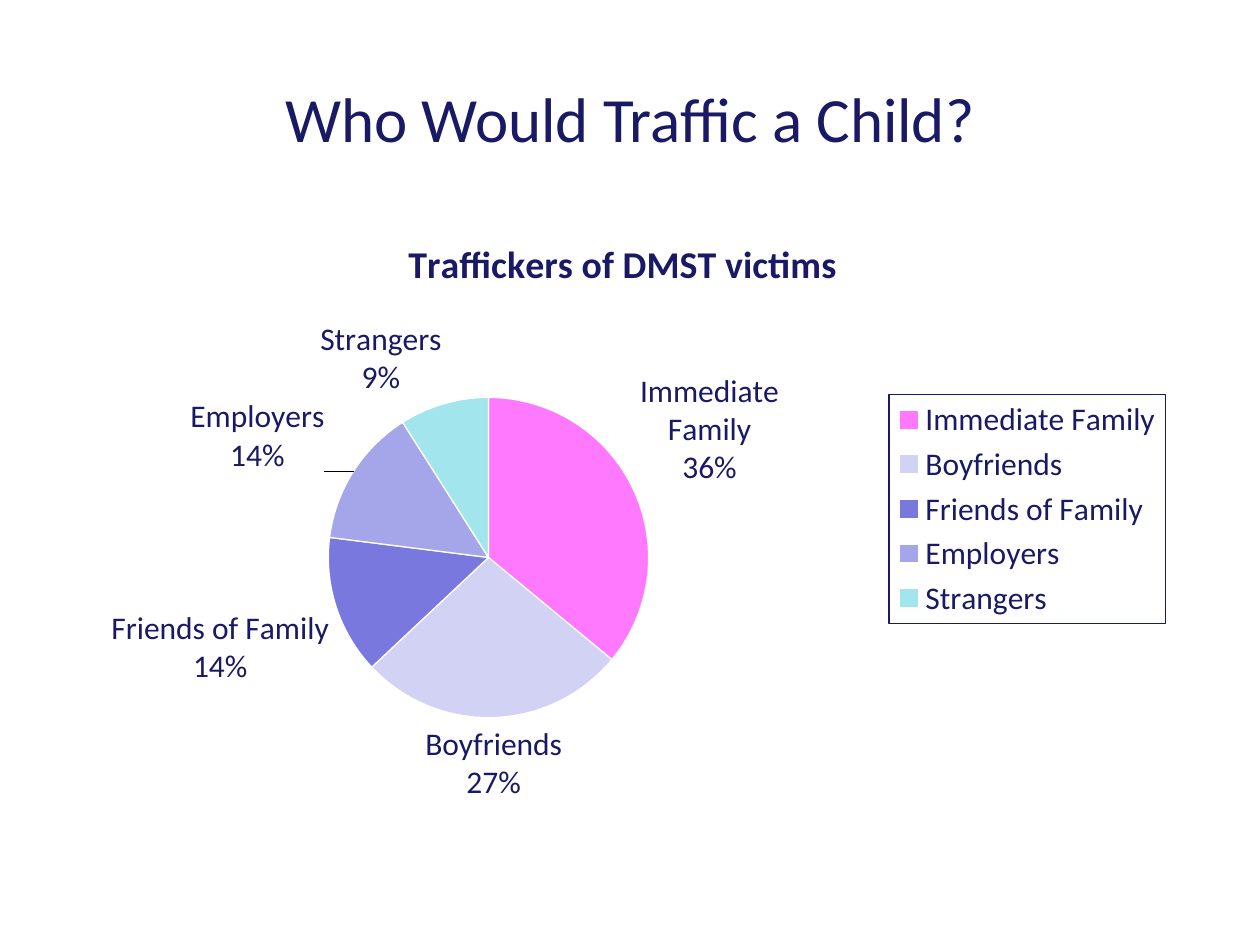
from copy import deepcopy
from dataclasses import dataclass

from lxml.etree import SubElement
from pptx import Presentation
from pptx.chart.data import CategoryChartData
from pptx.dml.color import RGBColor
from pptx.enum.chart import XL_CHART_TYPE as ChartType
from pptx.enum.chart import XL_LABEL_POSITION as LabelPosition
from pptx.enum.chart import XL_LEGEND_POSITION as LegendPosition
from pptx.enum.text import MSO_ANCHOR as Anchor
from pptx.enum.text import PP_ALIGN as Align
from pptx.oxml import parse_xml
from pptx.oxml.ns import nsdecls, qn
from pptx.util import Emu, Pt

PX = 914400 // 126
NAVY = "191966"
FONT = "Calibri"
CHART_TITLE = "Traffickers of DMST victims"


@dataclass(frozen=True)
class Trafficker:
    name: str
    percent: int
    color: str


@dataclass(frozen=True)
class Area:
    left: int
    top: int
    width: int
    height: int

    def emu(self) -> list[Emu]:
        return [Emu(side * PX) for side in (self.left, self.top, self.width, self.height)]


TRAFFICKERS = [
    Trafficker("Immediate Family", 36, "FF79FF"),
    Trafficker("Boyfriends", 27, "D2D2F4"),
    Trafficker("Friends of Family", 14, "7878DE"),
    Trafficker("Employers", 14, "A5A5E9"),
    Trafficker("Strangers", 9, "A2E5EC"),
]
TITLE_AREA = Area(63, 38, 1134, 158)
CHART_AREA = Area(53, 199, 1124, 620)


def rgb(value: str) -> RGBColor:
    return RGBColor.from_string(value)


def style(font, size: float, bold: bool = False) -> None:
    font.name = FONT
    font.size = Pt(size)
    font.bold = bold
    font.color.rgb = rgb(NAVY)


def set_layout(parent, index: int, **settings) -> None:
    for old in parent.findall(qn("c:layout")):
        parent.remove(old)
    layout = parse_xml(f"<c:layout {nsdecls('c')}><c:manualLayout/></c:layout>")
    for name, value in settings.items():
        SubElement(layout[0], qn(f"c:{name}")).set("val", str(value))
    parent.insert(index, layout)


def add_title(page) -> None:
    box = page.shapes.add_textbox(*TITLE_AREA.emu())
    frame = box.text_frame
    frame.word_wrap = True
    frame.vertical_anchor = Anchor.MIDDLE
    frame.margin_left = frame.margin_right = frame.margin_top = frame.margin_bottom = 0
    frame.text = "Who Would Traffic a Child?"
    para = frame.paragraphs[0]
    para.alignment = Align.CENTER
    para.line_spacing = 1.02
    style(para.runs[0].font, 36)


def add_labels(series) -> None:
    labels = series.data_labels
    labels.show_value = False
    labels.show_category_name = True
    labels.show_percentage = True
    labels.number_format = "0%"
    labels.number_format_is_linked = False
    labels.position = LabelPosition.OUTSIDE_END
    style(labels.font, 18)
    element = labels._element
    separator = parse_xml(f"<c:separator {nsdecls('c')}>\n</c:separator>")
    element.find(qn("c:showBubbleSize")).addnext(separator)

    employers = parse_xml(f'<c:dLbl {nsdecls("c")}><c:idx val="3"/></c:dLbl>')
    for child in element:
        if child.tag != qn("c:showLeaderLines"):
            employers.append(deepcopy(child))
    set_layout(employers, 1, x=-0.02, y=0.01)
    element.insert(0, employers)


def add_legend(chart) -> None:
    chart.has_legend = True
    legend = chart.legend
    legend.position = LegendPosition.RIGHT
    legend.include_in_layout = False
    style(legend.font, 18)
    element = legend._element
    set_layout(element, 1, xMode="edge", yMode="edge", x=0.744, y=0.315, w=0.246, h=0.37)
    border = parse_xml(
        f'<c:spPr {nsdecls("c", "a")}><a:ln w="9525"><a:solidFill>'
        f'<a:srgbClr val="{NAVY}"/></a:solidFill></a:ln></c:spPr>'
    )
    element.find(qn("c:overlay")).addnext(border)


def add_pie(page) -> None:
    data = CategoryChartData()
    data.categories = [trafficker.name for trafficker in TRAFFICKERS]
    data.add_series(CHART_TITLE, [trafficker.percent for trafficker in TRAFFICKERS])
    chart = page.shapes.add_chart(ChartType.PIE, *CHART_AREA.emu(), data).chart
    style(chart.font, 18)

    chart.has_title = True
    frame = chart.chart_title.text_frame
    frame.text = CHART_TITLE
    style(frame.paragraphs[0].runs[0].font, 21.6, bold=True)
    set_layout(chart.chart_title._element, 1, xMode="edge", yMode="edge", x=0.31, y=0.05)

    plot = chart.plots[0]
    plot.vary_by_categories = True
    series = plot.series[0]
    for index, trafficker in enumerate(TRAFFICKERS):
        look = series.points[index].format
        look.fill.solid()
        look.fill.fore_color.rgb = rgb(trafficker.color)
        look.line.color.rgb = rgb("FFFFFF")
        look.line.width = Pt(0.75)
    add_labels(series)
    add_legend(chart)
    set_layout(
        chart._chartSpace.chart.plotArea, 0, layoutTarget="inner",
        xMode="edge", yMode="edge", x=0.245, y=0.32, w=0.285, h=0.517,
    )


def main() -> None:
    deck = Presentation()
    deck.slide_width = Emu(1260 * PX)
    deck.slide_height = Emu(945 * PX)
    page = deck.slides.add_slide(deck.slide_layouts[6])
    add_pie(page)
    add_title(page)
    deck.save("out.pptx")


if __name__ == "__main__":
    main()
